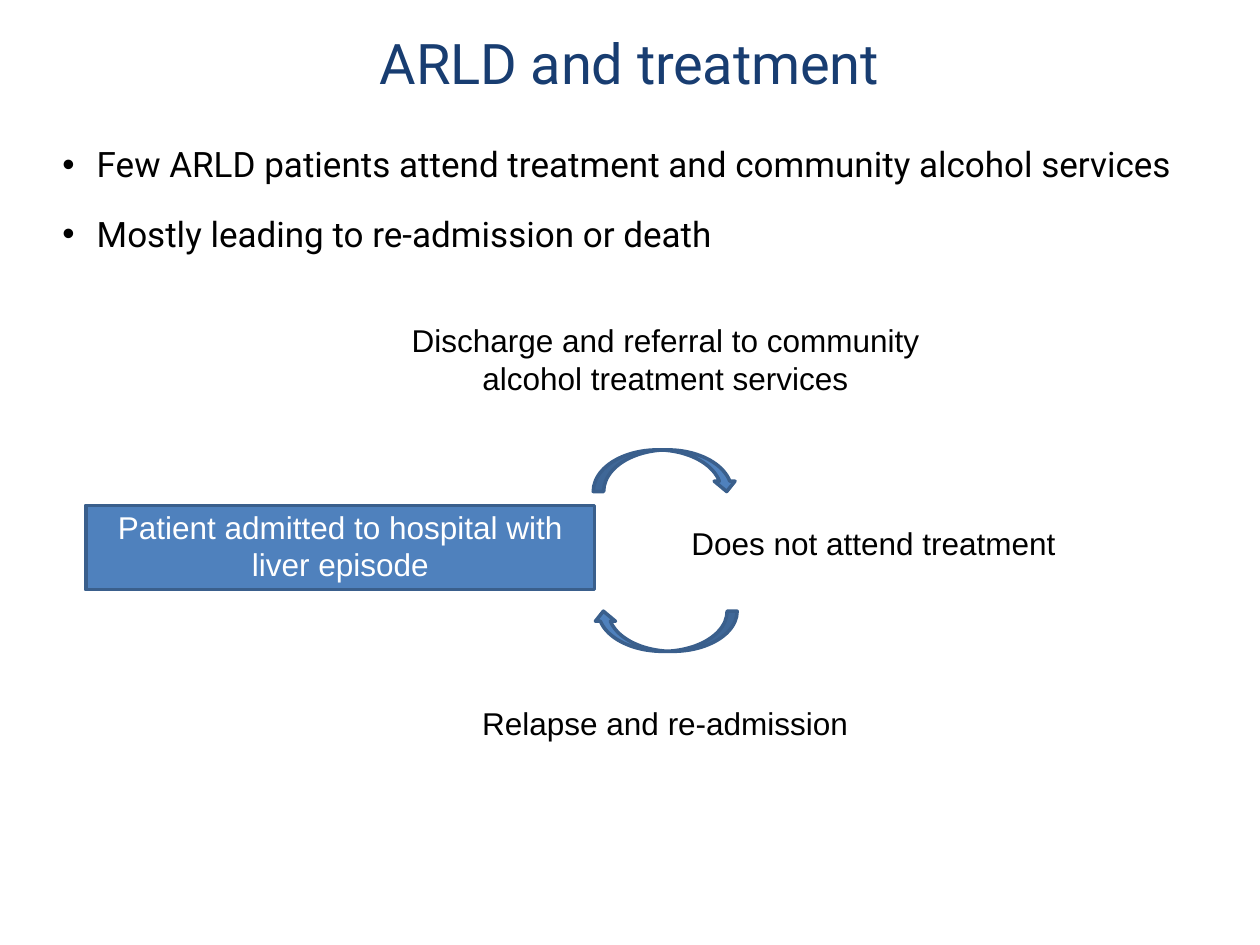
from typing import NamedTuple

from lxml.etree import SubElement
from pptx import Presentation
from pptx.dml.color import RGBColor
from pptx.enum.shapes import MSO_SHAPE
from pptx.enum.text import PP_ALIGN
from pptx.oxml.ns import qn
from pptx.util import Cm, Pt

NAVY = RGBColor(0x18, 0x3D, 0x71)
BLUE = RGBColor(0x4F, 0x81, 0xBD)
DARK_BLUE = RGBColor(0x3A, 0x5F, 0x8C)
BLACK = RGBColor(0x00, 0x00, 0x00)
WHITE = RGBColor(0xFF, 0xFF, 0xFF)


class Box(NamedTuple):
    """Left, top, width and height in centimetres."""
    left: float
    top: float
    width: float
    height: float

    def lengths(self) -> list:
        return [Cm(value) for value in self]


class Label(NamedTuple):
    text: str
    box: Box
    color: RGBColor = BLACK


class Block(NamedTuple):
    kind: MSO_SHAPE
    box: Box
    rotation: float = 0


BLOCKS = [
    Block(MSO_SHAPE.RECTANGLE, Box(1.73, 10.19, 10.26, 1.7)),
    Block(MSO_SHAPE.CURVED_DOWN_ARROW, Box(11.96, 9.07, 2.9, 0.84)),
    Block(MSO_SHAPE.CURVED_DOWN_ARROW, Box(11.96, 12.32, 2.9, 0.81), 180),
]
LABELS = [
    Label("Patient admitted to hospital with liver episode",
          Box(1.5, 10.11, 10.72, 1.8), WHITE),
    Label("Discharge and referral to community alcohol treatment services",
          Box(7.42, 6.35, 11.99, 1.98)),
    Label("Does not attend treatment", Box(13.56, 10.44, 8.1, 1.02)),
    Label("Relapse and re-admission", Box(8.33, 14.07, 10.16, 1.02)),
]
POINTS = [
    "Few ARLD patients attend treatment and community alcohol services",
    "Mostly leading to re-admission or death",
]


def add_frame(slide, box: Box, top_inset: float | None = None):
    """Add a wrapping text box; a top inset also clears the other insets."""
    frame = slide.shapes.add_textbox(*box.lengths()).text_frame
    frame.word_wrap = True
    if top_inset is not None:
        frame.margin_left = frame.margin_right = frame.margin_bottom = 0
        frame.margin_top = Cm(top_inset)
    return frame


def format_runs(paragraph, font_name: str, size: float, color: RGBColor) -> None:
    for run in paragraph.runs:
        run.font.name = font_name
        run.font.size = Pt(size)
        run.font.color.rgb = color


def add_title(slide, text: str) -> None:
    frame = add_frame(slide, Box(0.36, 0.51, 24.66, 1.4), 0.06)
    frame.text = text
    title = frame.paragraphs[0]
    title.alignment = PP_ALIGN.CENTER
    format_runs(title, "Roboto", 32, NAVY)
    title.runs[0].font._element.set("spc", "-10")


def add_points(slide, points: list[str]) -> None:
    frame = add_frame(slide, Box(1.24, 2.21, 25.1, 2.64), 0.25)
    for index, text in enumerate(points):
        point = frame.add_paragraph() if index else frame.paragraphs[0]
        point.text = text
        point.line_spacing = 1.5
        if index:
            point.space_before = Pt(3.5)
        properties = point._p.get_or_add_pPr()
        properties.set("marL", str(Cm(0.71)))
        properties.set("indent", str(Cm(-0.69)))
        SubElement(properties, qn("a:buFont"), typeface="Arial")
        SubElement(properties, qn("a:buChar"), char="•")
        format_runs(point, "Roboto", 20, BLACK)


def add_block(slide, block: Block) -> None:
    shape = slide.shapes.add_shape(block.kind, *block.box.lengths())
    shape.rotation = block.rotation
    shape.shadow.inherit = False
    shape.fill.solid()
    shape.fill.fore_color.rgb = BLUE
    shape.line.color.rgb = DARK_BLUE
    shape.line.width = Pt(2)


def add_label(slide, label: Label) -> None:
    frame = add_frame(slide, label.box)
    frame.text = label.text
    frame.paragraphs[0].alignment = PP_ALIGN.CENTER
    format_runs(frame.paragraphs[0], "Arial", 18, label.color)


def main() -> None:
    presentation = Presentation()
    presentation.slide_width = Cm(25.4)
    presentation.slide_height = Cm(19.05)
    slide = presentation.slides.add_slide(presentation.slide_layouts[6])

    # Heading and key points
    add_title(slide, "ARLD and treatment")
    add_points(slide, POINTS)

    # Readmission cycle
    for block in BLOCKS:
        add_block(slide, block)
    for label in LABELS:
        add_label(slide, label)

    presentation.save("out.pptx")


if __name__ == "__main__":
    main()
